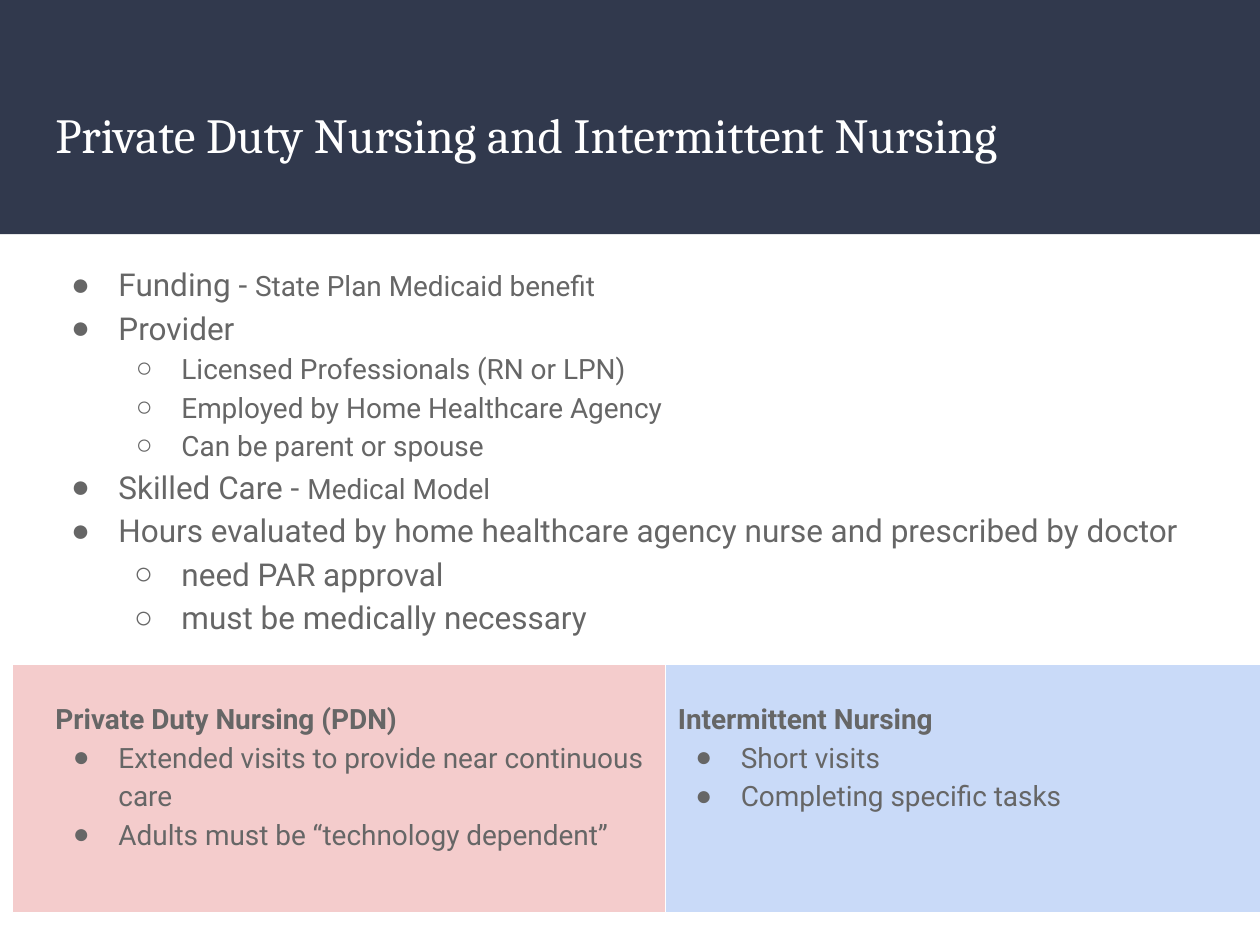
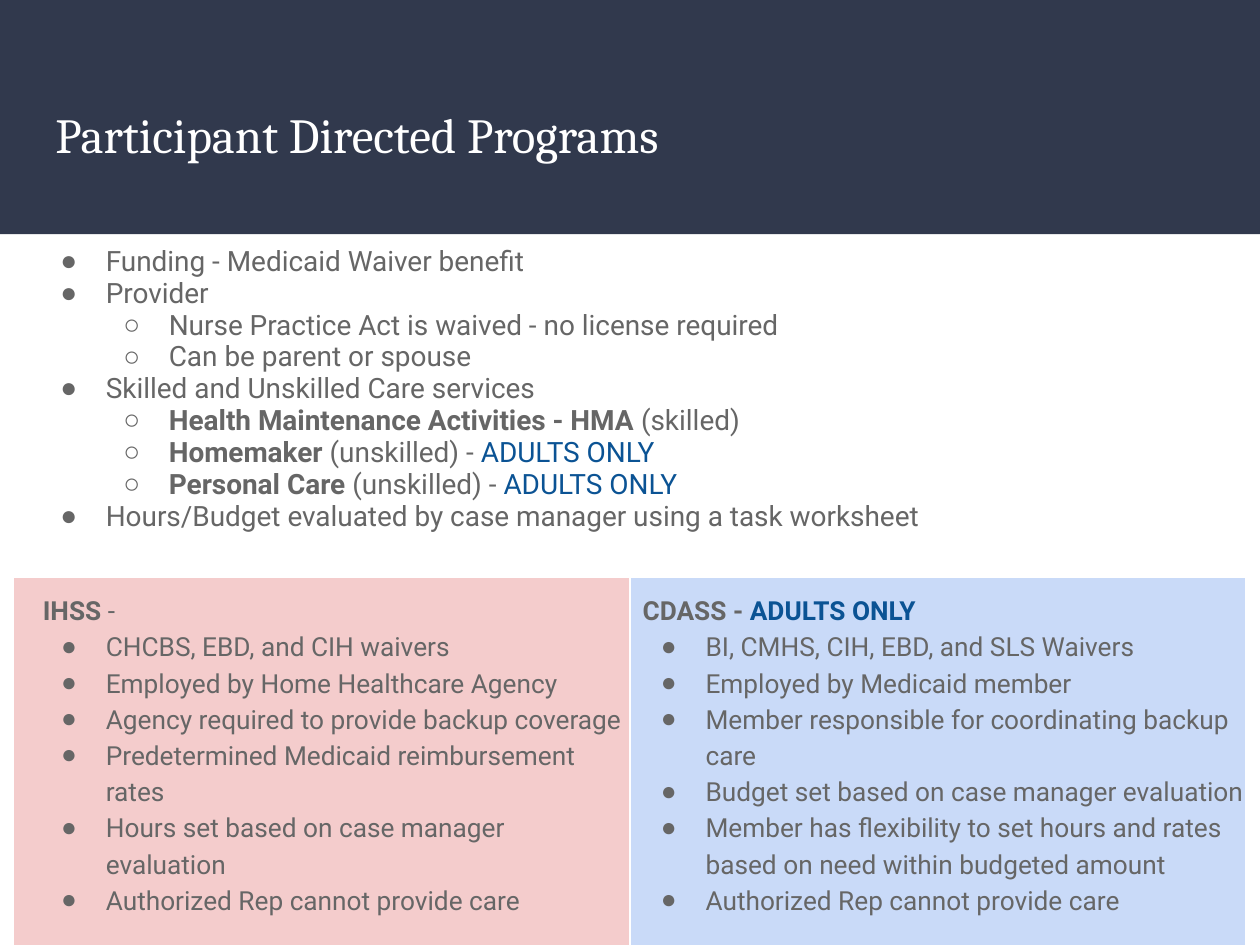
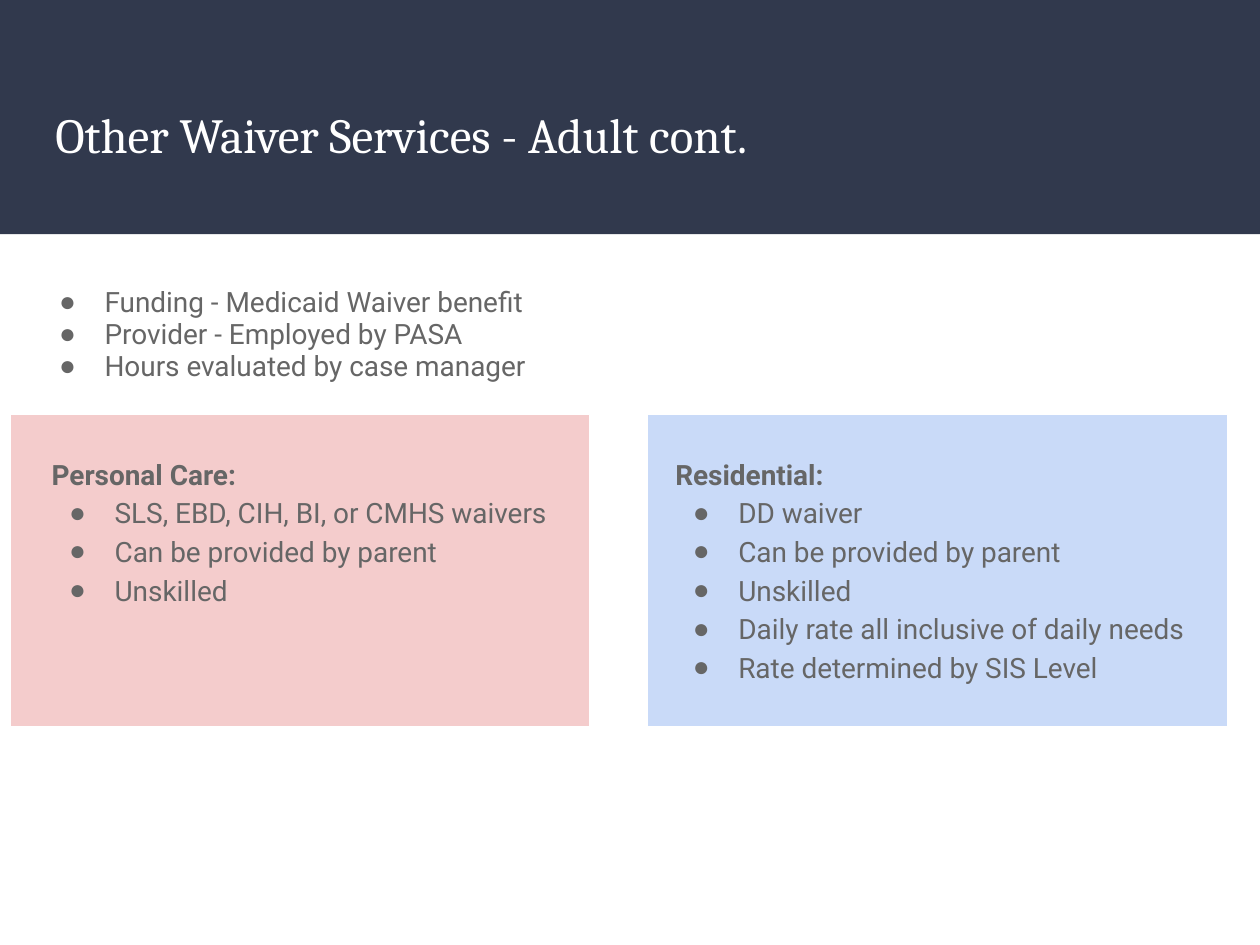
from dataclasses import dataclass

from lxml.etree import SubElement
from pptx import Presentation
from pptx.dml.color import RGBColor
from pptx.enum.shapes import MSO_SHAPE
from pptx.enum.text import MSO_ANCHOR, MSO_AUTO_SIZE, PP_ALIGN
from pptx.oxml.ns import qn
from pptx.util import Inches, Pt

# Shared style
NAVY, WHITE, GREY, BLUE = "31394D", "FFFFFF", "666666", "0B5394"
PINK, SKY = "F4CCCC", "C9DAF8"
TITLE_FONT, BODY_FONT = "Cambria", "Roboto"
COLS, ROWS = 100, 75
COMPARISON = 4  # layout with a title and several body placeholders
BULLETS = {1: "●", 2: "○"}


def rgb(hex_color):
    return RGBColor.from_string(hex_color)


@dataclass
class Run:
    text: str
    size: float = None
    bold: bool = False
    color: str = GREY


def line(level, *runs):
    """A paragraph: level 0 is a plain heading, 1 and 2 are bullets."""
    return level, [r if isinstance(r, Run) else Run(r) for r in runs]


def bullets(*texts):
    return [line(1, text) for text in texts]


def heading(text, *more):
    return line(0, Run(text, bold=True), *more)


class Deck:
    def __init__(self):
        self.prs = Presentation()
        self.prs.slide_width, self.prs.slide_height = Inches(10), Inches(7.5)
        self.col = self.prs.slide_width / COLS
        self.row = self.prs.slide_height / ROWS
        self.layout = self.prs.slide_layouts[COMPARISON]

    def box(self, x, y, w, h):
        return (round(x * self.col), round(y * self.row),
                round(w * self.col), round(h * self.row))

    def new_slide(self, title):
        self.s = self.prs.slides.add_slide(self.layout)
        self.free = [ph for ph in self.s.placeholders
                     if ph.placeholder_format.idx > 0]
        if len(self.prs.slides) == 1:
            self.add_band()
        tf = self.place(self.s.shapes.title, 3.4, 7.3, 93.2, 9.1)
        tf.text = title
        p = tf.paragraphs[0]
        p.alignment = PP_ALIGN.LEFT
        self.format_run(p.runs[0], TITLE_FONT, 28, False, WHITE)

    def add_band(self):
        """Put the title band on the layout, where every slide shows it."""
        band = self.rect(0, 0, COLS, 18.6, NAVY)
        band.element.nvSpPr.cNvPr.id = 99
        self.layout.shapes.element.insert(2, band.element)

    def rect(self, x, y, w, h, fill, outline=None):
        sp = self.s.shapes.add_shape(MSO_SHAPE.RECTANGLE, *self.box(x, y, w, h))
        sp.shadow.inherit = False
        sp.fill.solid()
        sp.fill.fore_color.rgb = rgb(fill)
        if outline:
            sp.line.color.rgb = rgb(outline)
            sp.line.width = Pt(0.75)
        else:
            sp.line.fill.background()
        return sp

    def panels(self, left, right, y, w, h):
        """Two coloured panels behind the text."""
        for x, fill in ((left, PINK), (right, SKY)):
            sp = self.rect(x, y, w, h, fill, WHITE)
            self.s.shapes.element.insert(2, sp.element)

    def place(self, ph, x, y, w, h):
        ph.left, ph.top, ph.width, ph.height = self.box(x, y, w, h)
        tf = ph.text_frame
        tf.word_wrap = True
        tf.auto_size = MSO_AUTO_SIZE.NONE
        tf.vertical_anchor = MSO_ANCHOR.TOP
        tf.margin_left = tf.margin_right = Inches(0.1)
        tf.margin_top = tf.margin_bottom = Inches(0.1)
        return tf

    def body(self, x, y, w, h, lines, size=16, spacing=1.15):
        tf = self.place(self.free.pop(0), x, y, w, h)
        for i, (level, runs) in enumerate(lines):
            p = tf.add_paragraph() if i else tf.paragraphs[0]
            p.level = max(level - 1, 0)
            p.alignment = PP_ALIGN.LEFT
            p.line_spacing = spacing
            p.space_before = p.space_after = Pt(0)
            self.bullet(p, level, runs[0].size or size)
            for run in runs:
                r = p.add_run()
                r.text = run.text
                self.format_run(r, BODY_FONT, run.size or size,
                                run.bold, run.color)

    def bullet(self, p, level, size):
        """Set indent and bullet; the bullet font comes from the master."""
        pPr = p._p.get_or_add_pPr()
        hanging = Inches(0.25 + size / 144) if level else 0
        pPr.set("marL", str(Inches(0.5 * level)))
        pPr.set("indent", str(-hanging))
        if not level:
            SubElement(pPr, qn("a:buNone"))
            return
        SubElement(SubElement(pPr, qn("a:buClr")), qn("a:srgbClr"), val=GREY)
        SubElement(pPr, qn("a:buChar"), char=BULLETS[level])

    def format_run(self, r, font, size, bold, color):
        r.font.name, r.font.size, r.font.bold = font, Pt(size), bold
        r.font.color.rgb = rgb(color)

    def finish_slide(self):
        for ph in self.free:
            ph.element.getparent().remove(ph.element)


def nursing(d):
    d.new_slide("Private Duty Nursing and Intermittent Nursing")
    d.panels(1, 52.8, 52.7, 51.8, 19.7)
    d.body(3.4, 19.6, 92, 33.2, [
        line(1, "Funding - ", Run("State Plan Medicaid benefit", 16)),
        line(1, "Provider"),
        line(2, Run("Licensed Professionals (RN or LPN)", 16)),
        line(2, Run("Employed by Home Healthcare Agency", 16)),
        line(2, Run("Can be parent or spouse", 16)),
        line(1, "Skilled Care - ", Run("Medical Model", 16)),
        line(1, "Hours evaluated by home healthcare agency nurse "
                "and prescribed by doctor"),
        line(2, "need PAR approval"),
        line(2, "must be medically necessary"),
    ], size=18)
    d.body(3.4, 54.3, 49.4, 12.5, [
        heading("Private Duty Nursing (PDN)"),
        *bullets("Extended visits to provide near continuous care",
                 "Adults must be “technology dependent”")])
    d.body(52.8, 54.3, 43.7, 11.7, [
        heading("Intermittent Nursing"),
        *bullets("Short visits", "Completing specific tasks")])
    d.finish_slide()


def participant_directed(d):
    adults_only = Run("ADULTS ONLY", color=BLUE)
    d.new_slide("Participant Directed Programs")
    d.panels(1.1, 50, 45.8, 48.9, 30.9)
    d.body(2.4, 18.5, 91.1, 29.6, [
        *bullets("Funding - Medicaid Waiver benefit", "Provider"),
        line(2, "Nurse Practice Act is waived - no license required"),
        line(2, "Can be parent or spouse"),
        line(1, "Skilled and Unskilled Care services"),
        line(2, Run("Health Maintenance Activities - HMA", bold=True),
             " (skilled)"),
        *[line(2, Run(service, bold=True), " (unskilled) - ", adults_only)
          for service in ("Homemaker", "Personal Care")],
        line(1, "Hours/Budget evaluated by case manager using a task worksheet"),
    ], spacing=0.95)
    d.body(2.4, 45.8, 48.2, 27.7, [
        heading("IHSS ", "-"),
        *bullets("CHCBS, EBD, and CIH waivers",
                 "Employed by Home Healthcare Agency",
                 "Agency required to provide backup coverage",
                 "Predetermined Medicaid reimbursement rates",
                 "Hours set based on case manager evaluation",
                 "Authorized Rep cannot provide care")], size=15)
    d.body(50, 45.8, 50, 28.2, [
        heading("CDASS - ", Run("ADULTS ONLY", bold=True, color=BLUE)),
        *bullets("BI, CMHS, CIH, EBD, and SLS Waivers",
                 "Employed by Medicaid member",
                 "Member responsible for coordinating backup care",
                 "Budget set based on case manager evaluation",
                 "Member has flexibility to set hours and rates "
                 "based on need within budgeted amount",
                 "Authorized Rep cannot provide care")], size=15)
    d.finish_slide()


def other_waivers(d):
    d.new_slide("Other Waiver Services - Adult cont.")
    d.panels(0.8, 51.4, 32.9, 46, 24.8)
    d.body(2.3, 21.8, 91.1, 15.7,
           bullets("Funding - Medicaid Waiver benefit",
                   "Provider - Employed by PASA",
                   "Hours evaluated by case manager"), spacing=0.95)
    d.body(3.1, 34.9, 43.7, 21.9, [
        heading("Personal Care:"),
        *bullets("SLS, EBD, CIH, BI, or CMHS waivers",
                 "Can be provided by parent", "Unskilled")])
    d.body(52.6, 34.9, 43.7, 20.7, [
        heading("Residential:"),
        *bullets("DD waiver", "Can be provided by parent", "Unskilled",
                 "Daily rate all inclusive of daily needs",
                 "Rate determined by SIS Level")])
    d.finish_slide()


def main():
    d = Deck()
    for build in (nursing, participant_directed, other_waivers):
        build(d)
    d.prs.save("out.pptx")


if __name__ == "__main__":
    main()
